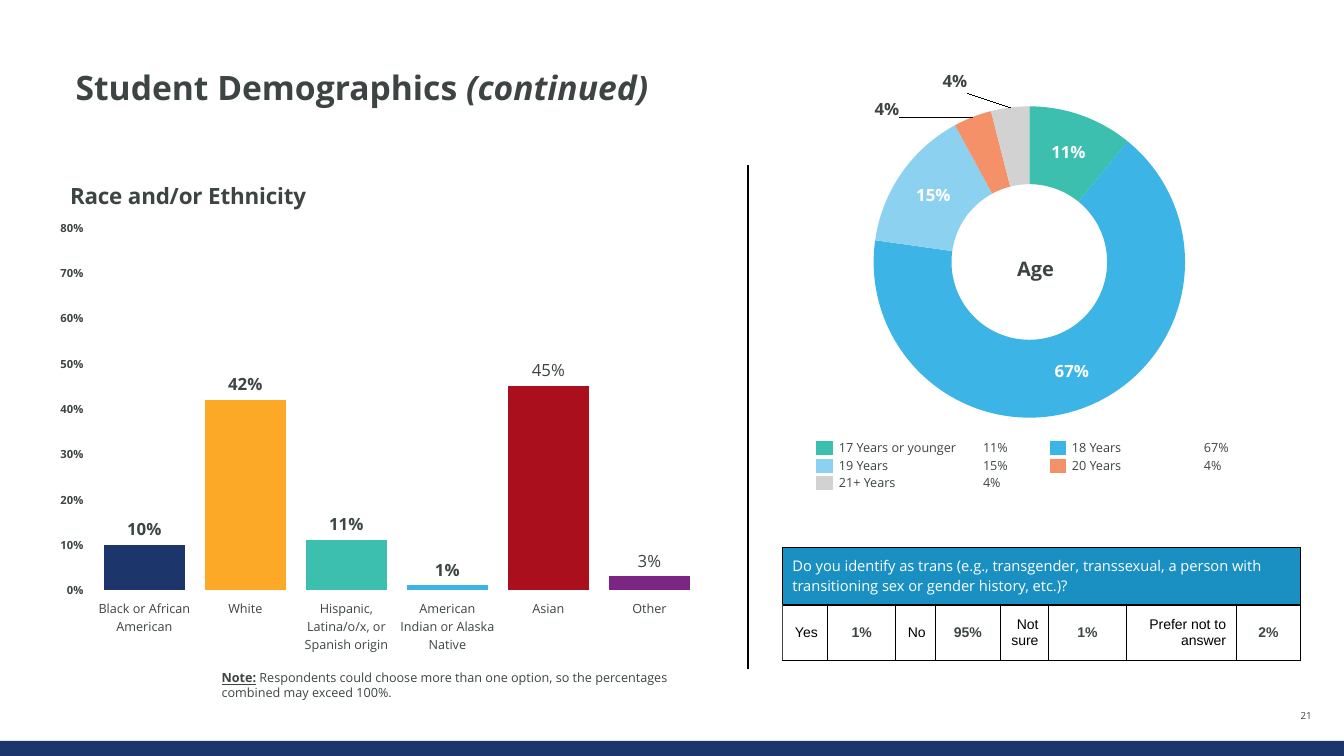
from lxml import etree
from pptx import Presentation
from pptx.chart.data import CategoryChartData
from pptx.dml.color import RGBColor
from pptx.enum.chart import XL_CHART_TYPE, XL_LABEL_POSITION
from pptx.enum.shapes import MSO_CONNECTOR, MSO_SHAPE
from pptx.enum.text import MSO_ANCHOR, PP_ALIGN
from pptx.oxml.ns import qn
from pptx.util import Inches, Pt

COLUMN, DOUGHNUT = XL_CHART_TYPE.COLUMN_CLUSTERED, XL_CHART_TYPE.DOUGHNUT
OUTSIDE_END = XL_LABEL_POSITION.OUTSIDE_END
STRAIGHT, RECTANGLE = MSO_CONNECTOR.STRAIGHT, MSO_SHAPE.RECTANGLE
TOP, MIDDLE, BOTTOM = MSO_ANCHOR.TOP, MSO_ANCHOR.MIDDLE, MSO_ANCHOR.BOTTOM
LEFT, CENTER, RIGHT = PP_ALIGN.LEFT, PP_ALIGN.CENTER, PP_ALIGN.RIGHT

INK = RGBColor(0x3C, 0x45, 0x43)
BLACK = RGBColor(0x00, 0x00, 0x00)
WHITE = RGBColor(0xFF, 0xFF, 0xFF)
NAVY = RGBColor(0x1C, 0x36, 0x6B)
AMBER = RGBColor(0xFB, 0xA9, 0x27)
TEAL = RGBColor(0x3C, 0xBF, 0xAE)
BLUE = RGBColor(0x3C, 0xB5, 0xE6)
PALE_BLUE = RGBColor(0x8C, 0xD2, 0xF0)
CORAL = RGBColor(0xF5, 0x91, 0x68)
GREY = RGBColor(0xD2, 0xD2, 0xD2)
RED = RGBColor(0xA9, 0x0F, 0x1C)
PURPLE = RGBColor(0x7B, 0x26, 0x82)
HEADER_BLUE = RGBColor(0x19, 0x90, 0xC1)
HEADING_FONT, ANSWER_FONT = "Open Sans", "Arial"


def style_font(font, size=9, color=INK, bold=False, italic=False, underline=False, face=HEADING_FONT):
    font.name, font.size, font.bold = face, Pt(size), bold
    font.italic, font.underline = italic, underline
    font.color.rgb = color


def write(paragraph, text, align=LEFT, **style):
    paragraph.alignment = align
    if text:
        run = paragraph.add_run()
        run.text = text
        style_font(run.font, **style)
    else:
        etree.SubElement(paragraph._p, qn("a:endParaRPr"), sz="100")


def set_margins(holder, left=0, top=0, right=0, bottom=0):
    holder.margin_left, holder.margin_top = Inches(left), Inches(top)
    holder.margin_right, holder.margin_bottom = Inches(right), Inches(bottom)


def set_border(cell, **sides):
    properties = cell._tc.get_or_add_tcPr()
    for position, side in enumerate(side for side in "LRTB" if side in sides):
        color, width = sides[side]
        line = etree.Element(qn("a:ln" + side), w=str(Pt(width)))
        solid = etree.SubElement(line, qn("a:solidFill"))
        etree.SubElement(solid, qn("a:srgbClr"), val=str(color))
        properties.insert(position, line)


def set_layout(element, index, **values):
    for old in element.findall(qn("c:layout")):
        element.remove(old)
    layout = etree.Element(qn("c:layout"))
    manual = etree.SubElement(layout, qn("c:manualLayout"))
    for tag, value in values.items():
        etree.SubElement(manual, qn("c:" + tag), val=str(value))
    element.insert(index, layout)


class DemographicsSlide:
    def __init__(self, presentation):
        self.width, self.height = presentation.slide_width, presentation.slide_height
        self.slide = presentation.slides.add_slide(presentation.slide_layouts[5])
        self.shapes = self.slide.shapes

    def across(self, percent):
        return int(self.width * percent / 100)

    def down(self, percent):
        return int(self.height * percent / 100)

    def area(self, left, top, width, height):
        return self.across(left), self.down(top), self.across(width), self.down(height)

    def title(self, area, parts):
        heading = self.shapes.title
        heading.left, heading.top, heading.width, heading.height = self.area(*area)
        frame = heading.text_frame
        frame.vertical_anchor = TOP
        set_margins(frame)
        frame.paragraphs[0].line_spacing = 0.9
        for text, style in parts:
            write(frame.paragraphs[0], text, **style)

    def bar(self, area, color):
        bar = self.shapes.add_shape(RECTANGLE, *self.area(*area))
        bar.shadow.inherit = False
        bar.fill.solid()
        bar.fill.fore_color.rgb = color
        bar.line.fill.background()

    def text(self, area, parts, margins=(0.1, 0.05, 0.1, 0.05), anchor=TOP):
        frame = self.shapes.add_textbox(*self.area(*area)).text_frame
        frame.word_wrap = True
        frame.vertical_anchor = anchor
        set_margins(frame, *margins)
        for text, style in parts:
            write(frame.paragraphs[0], text, **style)

    def divider(self, x, top, bottom):
        x = self.across(x)
        rule = self.shapes.add_connector(STRAIGHT, x, self.down(top), x, self.down(bottom))
        rule.line.color.rgb = BLACK
        rule.line.width = Pt(1)
        etree.SubElement(rule._element.spPr, qn("a:effectLst"))

    def table(self, left, top, columns, rows):
        area = self.area(left, top, sum(columns), sum(rows))
        table = self.shapes.add_table(len(rows), len(columns), *area).table
        table.first_row = table.horz_banding = False
        for column, width in zip(table.columns, columns):
            column.width = self.across(width)
        for row, height in zip(table.rows, rows):
            row.height = self.down(height)
        return table

    def cell(self, cell, text="", fill=WHITE, margins=(0, 0, 0, 0), anchor=TOP, **style):
        cell.fill.solid()
        cell.fill.fore_color.rgb = fill
        cell.vertical_anchor = anchor
        set_margins(cell, *margins)
        write(cell.text_frame.paragraphs[0], text, **style)

    def chart(self, kind, area, heading, heading_size, heading_at, plot_at, values, colors, label_color):
        data = CategoryChartData(number_format="0%")
        data.categories = list(values)
        data.add_series("Series 1", list(values.values()))
        chart = self.shapes.add_chart(kind, *self.area(*area), data).chart
        style_font(chart.font, size=8)
        chart.has_legend = False
        chart.has_title = True
        write(chart.chart_title.text_frame.paragraphs[0], heading, size=heading_size, bold=True)
        x, y = heading_at
        set_layout(chart.chart_title._element, 1, xMode="edge", yMode="edge", x=x, y=y)
        x, y, w, h = plot_at
        set_layout(chart._chartSpace.chart.plotArea, 0, layoutTarget="inner",
                   xMode="edge", yMode="edge", x=x, y=y, w=w, h=h)
        series = chart.plots[0].series[0]
        for index, color in enumerate(colors):
            fill = series.points[index].format.fill
            fill.solid()
            fill.fore_color.rgb = color
        labels = series.data_labels
        labels.show_value = True
        labels.number_format, labels.number_format_is_linked = "0%", False
        style_font(labels.font, size=12, color=label_color, bold=True)
        return chart


def add_race_chart(page):
    shares = {"Black or African American": 0.1, "White": 0.42,
              "Hispanic, Latina/o/x, or Spanish origin": 0.11,
              "American Indian or Alaska Native": 0.01, "Asian": 0.45, "Other": 0.03}
    chart = page.chart(COLUMN, (1.8, 21.07, 51.84, 69.47), "Race and/or Ethnicity", 16, (0.06, 0.03),
                       (0.1, 0.13, 0.87, 0.69), shares, [NAVY, AMBER, TEAL, BLUE, RED, PURPLE], INK)
    plot = chart.plots[0]
    plot.gap_width, plot.vary_by_categories = 25, False
    plot.series[0].data_labels.position = OUTSIDE_END
    for index in (4, 5):
        label = plot.series[0].points[index].data_label
        style_font(label.font, size=12)
        label.position = OUTSIDE_END
    percent = chart.value_axis
    percent.minimum_scale, percent.maximum_scale, percent.major_unit = 0, 0.8, 0.1
    percent.has_major_gridlines = False
    for axis, size, bold in ((percent, 8, True), (chart.category_axis, 9, False)):
        style_font(axis.tick_labels.font, size=size, bold=bold)
        axis.format.line.fill.background()


def add_age_chart(page, ages, colors):
    chart = page.chart(DOUGHNUT, (61.44, 2.67, 29.71, 53.33), "Age", 14.3, (0.47, 0.57),
                       (0.12, 0.2, 0.78, 0.8), ages, colors, WHITE)
    chart.plots[0].vary_by_categories = True
    for index, x, y in ((3, -0.25, -0.11), (4, -0.15, -0.16)):
        label = chart.plots[0].series[0].points[index].data_label
        style_font(label.font, size=12, bold=True)
        set_layout(label._get_or_add_dLbl(), 1, x=x, y=y)


def add_age_legend(page, ages, colors):
    legend = page.table(60.69, 58.13, [1.35, 10.88, 5.18, 1.28, 9.98, 4.43], [2.32] * 3)
    entries = [*zip(ages.items(), colors), (("", None), WHITE)]
    for index, ((age, share), color) in enumerate(entries):
        row, half = divmod(index, 2)
        swatch, name, value = (legend.cell(row, half * 3 + offset) for offset in range(3))
        page.cell(swatch, fill=color)
        page.cell(name, age, margins=(0.05, 0, 0, 0))
        page.cell(value, f"{share:.0%}" if age else "", margins=(0.03, 0, 0, 0))
        for cell in (swatch, name, value):
            set_border(cell, T=(WHITE, 3), B=(WHITE, 3))


def add_trans_table(page):
    padding = (0.1, 0.05, 0.1, 0.05)
    answers = ["Yes", "1%", "No", "95%", "Not sure", "1%", "Prefer not to answer", "2%"]
    table = page.table(58.21, 72.4, [3.38, 5.03, 3, 4.8, 3.6, 5.78, 8.18, 4.8], [7.6, 7.33])
    table.cell(0, 0).merge(table.cell(0, 7))
    page.cell(table.cell(0, 0), "Do you identify as trans (e.g., transgender, transsexual, a "
              "person with transitioning sex or gender history, etc.)?",
              fill=HEADER_BLUE, margins=padding, anchor=MIDDLE, size=10.5, color=WHITE)
    thin, medium, thick = (BLACK, 0.5), (BLACK, 0.96), (BLACK, 1.91)
    for column, answer in enumerate(answers):
        is_share = column % 2 == 1
        page.cell(table.cell(1, column), answer, margins=padding, anchor=MIDDLE, size=10,
                  face=ANSWER_FONT, align=CENTER if is_share else RIGHT,
                  color=INK if is_share else BLACK, bold=is_share)
        set_border(table.cell(0, column), L=thin, R=thin, T=thin, B=thick)
        set_border(table.cell(1, column), L=thin if column else (INK, 1),
                   R=thin if is_share else medium, T=thick, B=thin)


def main():
    presentation = Presentation()
    presentation.slide_width, presentation.slide_height = Inches(13.33), Inches(7.5)
    page = DemographicsSlide(presentation)
    page.bar((0, 98, 100, 2), NAVY)
    page.title((5.63, 9.47, 88.75, 9.33), [("Student Demographics ", {"size": 24, "bold": True}),
                                          ("(continued)", {"size": 24, "bold": True, "italic": True})])
    page.text((95.27, 93.47, 3.83, 2), [("21", {"size": 7, "align": CENTER})], (0, 0, 0, 0), BOTTOM)
    page.divider(55.66, 21.87, 88.53)
    ages = {"17 Years or younger": 0.11, "18 Years": 0.67, "19 Years": 0.15,
            "20 Years": 0.04, "21+ Years": 0.04}
    age_colors = [TEAL, BLUE, PALE_BLUE, CORAL, GREY]
    add_age_legend(page, ages, age_colors)
    add_age_chart(page, ages, age_colors)
    add_trans_table(page)
    add_race_chart(page)
    page.text((15.75, 88, 37.36, 5.33), [
        ("Note:", {"bold": True, "underline": True}),
        (" Respondents could choose more than one option, so the percentages combined may exceed 100%.", {})])
    presentation.save("out.pptx")


if __name__ == "__main__":
    main()
